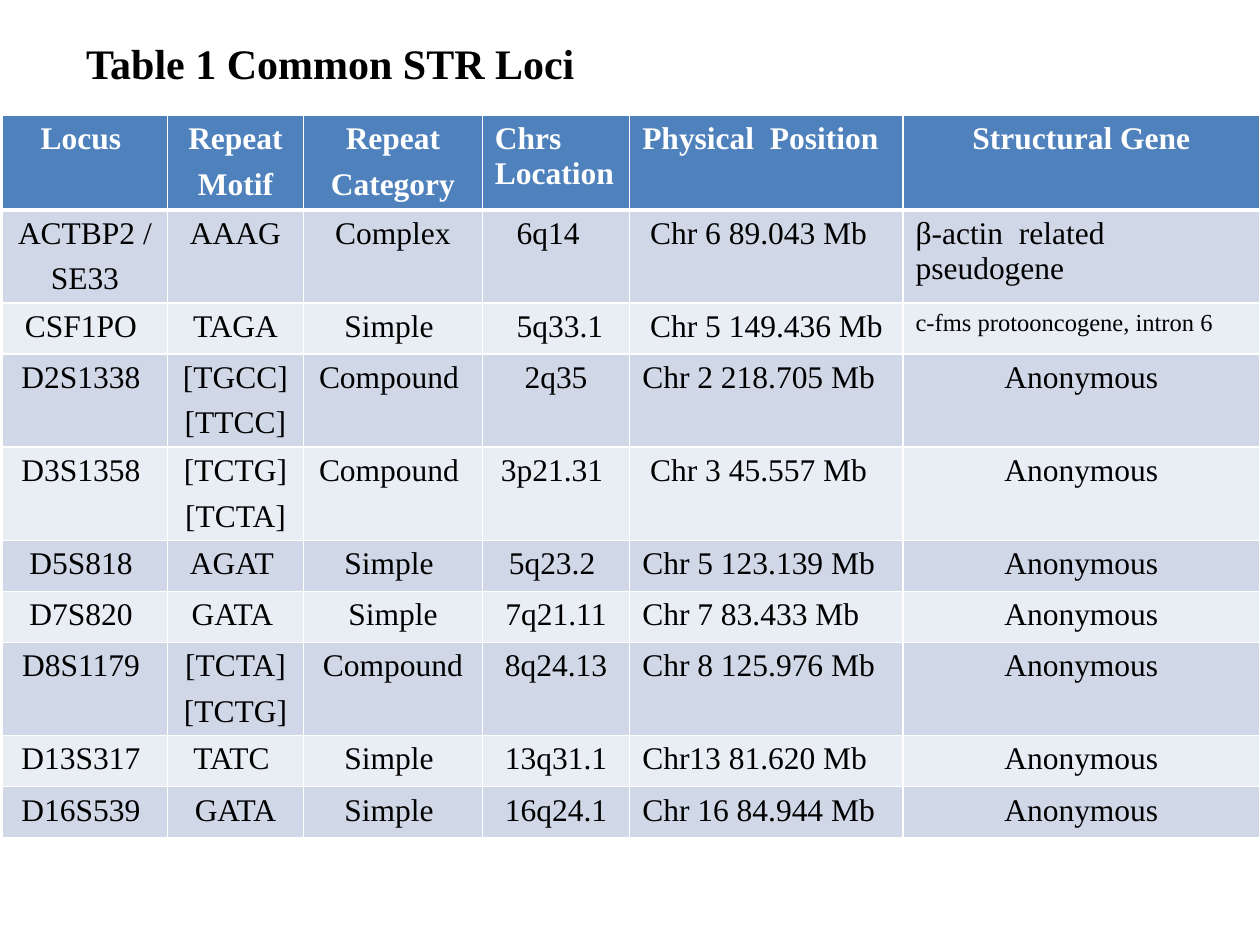
from lxml import etree
from pptx import Presentation
from pptx.dml.color import RGBColor
from pptx.enum.text import MSO_ANCHOR, PP_ALIGN
from pptx.oxml.ns import qn
from pptx.util import Pt

LEFT, CENTER = PP_ALIGN.LEFT, PP_ALIGN.CENTER
TOP, MIDDLE = MSO_ANCHOR.TOP, MSO_ANCHOR.MIDDLE
FONT = "Times New Roman"
COLORS = {
    "text": "000000",
    "header": "4F81BD",
    "header_text": "FFFFFF",
    "odd_row": "D0D8E8",
    "even_row": "E9EDF4",
    "border": "FFFFFF",
}
COLUMN_WIDTHS = [94.3, 77.8, 102.2, 84.2, 156.2, 203.8]
HEADER_HEIGHT, DOUBLE_HEIGHT, SINGLE_HEIGHT = 54, 53.2, 29.2
HEADER = ["Locus ", "Repeat\nMotif", "Repeat\nCategory", "Chrs Location",
          "Physical  Position", "Structural Gene"]
LOCI = [
    ["ACTBP2 /\nSE33", "AAAG", "Complex", "6q14  ", " Chr 6 89.043 Mb",
     "β-actin  related pseudogene"],
    ["CSF1PO ", "TAGA", "Simple ", " 5q33.1", " Chr 5 149.436 Mb",
     "c-fms protooncogene, intron 6"],
    ["D2S1338 ", "[TGCC]\n[TTCC]", "Compound ", "2q35", "Chr 2 218.705 Mb", "Anonymous"],
    ["D3S1358 ", "[TCTG]\n[TCTA]", "Compound ", "3p21.31 ", " Chr 3 45.557 Mb", "Anonymous"],
    ["D5S818 ", "AGAT ", "Simple ", "5q23.2 ", "Chr 5 123.139 Mb", "Anonymous"],
    ["D7S820 ", "GATA ", "Simple", " 7q21.11 ", "Chr 7 83.433 Mb", "Anonymous"],
    ["D8S1179 ", "[TCTA]\n[TCTG]", "Compound", " 8q24.13 ", "Chr 8 125.976 Mb", "Anonymous"],
    ["D13S317 ", "TATC ", "Simple ", " 13q31.1 ", "Chr13 81.620 Mb", "Anonymous"],
    ["D16S539 ", "GATA", "Simple ", " 16q24.1 ", "Chr 16 84.944 Mb", "Anonymous"],
]
LEFT_ALIGNED = {"Chrs Location", "β-actin  related pseudogene",
                "c-fms protooncogene, intron 6"}
SMALL_TEXT = {"c-fms protooncogene, intron 6"}
POSITION_COLUMN = 4


def rgb(name):
    return RGBColor.from_string(COLORS[name])


def format_paragraph(paragraph, size, color, bold, align):
    paragraph.alignment = align
    paragraph.font.name = FONT
    paragraph.font.size = Pt(size)
    paragraph.font.bold = bold
    paragraph.font.color.rgb = rgb(color)


def add_title(slide, text):
    title = slide.shapes.title
    title.left, title.top, title.width, title.height = Pt(42), Pt(18), Pt(420), Pt(36)
    frame = title.text_frame
    frame.text = text
    frame.vertical_anchor = MIDDLE
    format_paragraph(frame.paragraphs[0], 24, "text", True, LEFT)


def set_borders(cell, widths):
    properties = cell._tc.get_or_add_tcPr()
    for index, (side, width) in enumerate(widths.items()):
        line = etree.Element(qn(f"a:ln{side}"), w=str(Pt(width)))
        fill = etree.SubElement(line, qn("a:solidFill"))
        etree.SubElement(fill, qn("a:srgbClr"), val=COLORS["border"])
        properties.insert(index, line)


def fill_cell(cell, text, fill, color, bold, align):
    cell.fill.solid()
    cell.fill.fore_color.rgb = rgb(fill)
    cell.vertical_anchor = TOP
    cell.text = text
    size = 14 if text in SMALL_TEXT else 18
    for paragraph in cell.text_frame.paragraphs:
        format_paragraph(paragraph, size, color, bold, align)
        paragraph.space_after = Pt(6)


def row_height(index, texts):
    if index == 0:
        return HEADER_HEIGHT
    return DOUBLE_HEIGHT if any("\n" in text for text in texts) else SINGLE_HEIGHT


def add_loci_table(slide):
    rows = [HEADER] + LOCI
    heights = [row_height(index, texts) for index, texts in enumerate(rows)]
    table = slide.shapes.add_table(
        len(rows), len(HEADER), Pt(1.4), Pt(66),
        Pt(sum(COLUMN_WIDTHS)), Pt(sum(heights))).table
    for column, width in zip(table.columns, COLUMN_WIDTHS):
        column.width = Pt(width)
    for r, (texts, height) in enumerate(zip(rows, heights)):
        table.rows[r].height = Pt(height)
        is_header = r == 0
        fill = "header" if is_header else ("odd_row" if r % 2 else "even_row")
        color = "header_text" if is_header else "text"
        for c, text in enumerate(texts):
            align = LEFT if c == POSITION_COLUMN or text in LEFT_ALIGNED else CENTER
            cell = table.cell(r, c)
            fill_cell(cell, text, fill, color, is_header, align)
            if is_header:
                set_borders(cell, {"L": 1, "R": 1, "T": 1, "B": 3})


def main():
    presentation = Presentation()
    presentation.slide_width, presentation.slide_height = Pt(720), Pt(540)
    slide = presentation.slides.add_slide(presentation.slide_layouts[5])
    add_title(slide, "Table 1 Common STR Loci")
    add_loci_table(slide)
    presentation.save("out.pptx")


if __name__ == "__main__":
    main()
